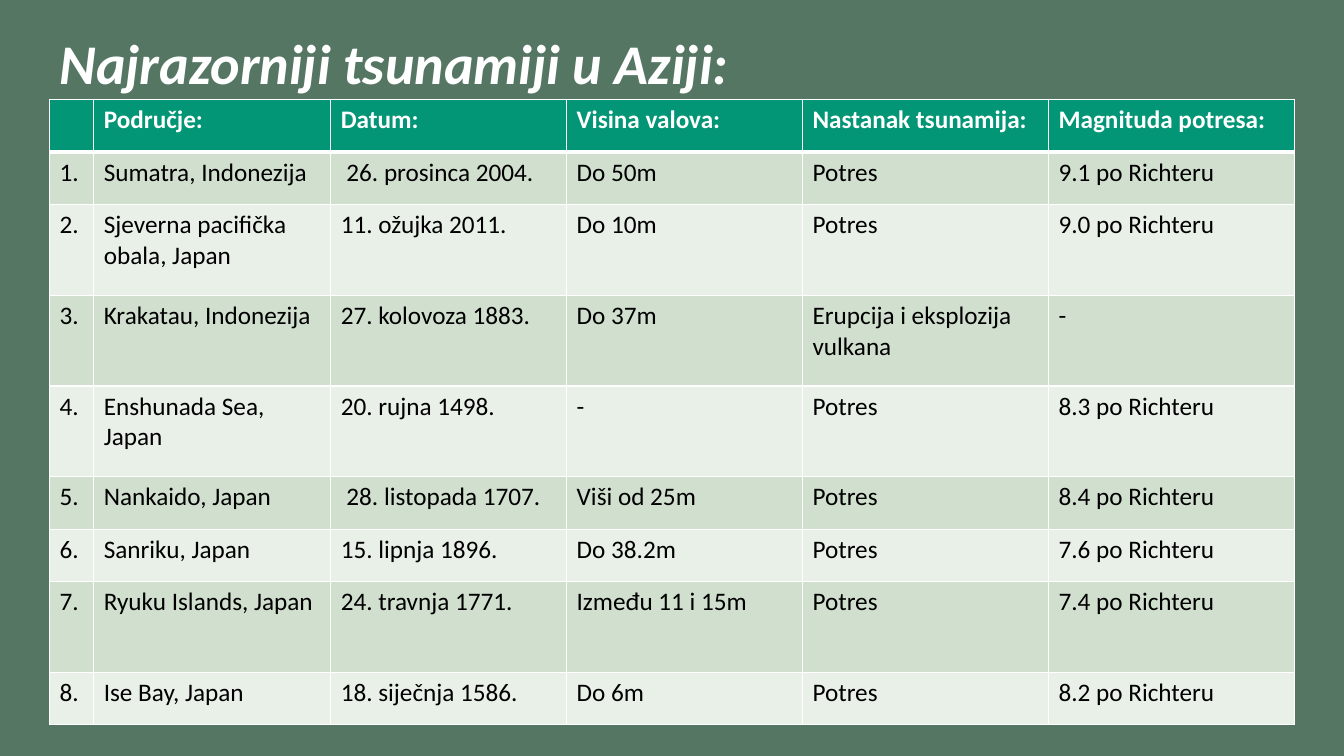
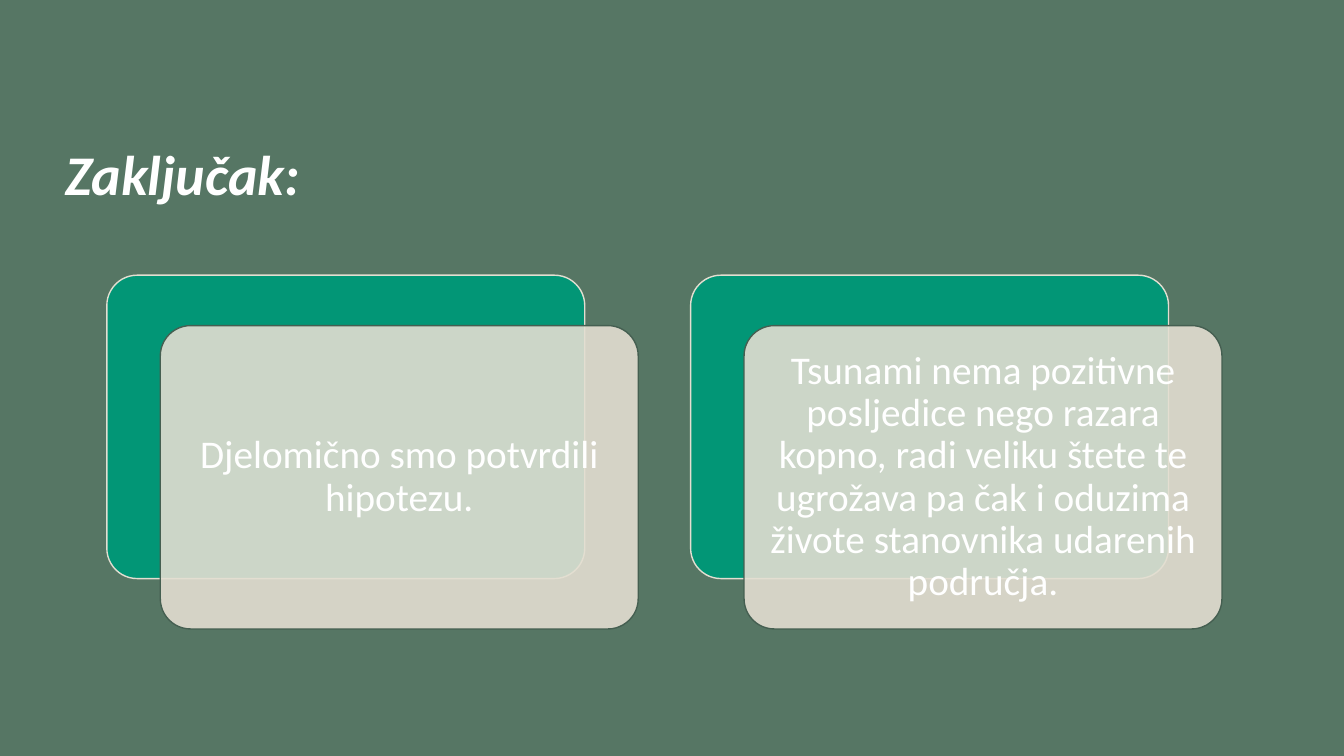
from itertools import product

from pptx import Presentation
from pptx.dml.color import RGBColor
from pptx.enum.shapes import MSO_SHAPE
from pptx.enum.text import MSO_ANCHOR, PP_ALIGN
from pptx.oxml import parse_xml
from pptx.oxml.ns import nsdecls, qn
from pptx.util import Inches, Pt

WHITE = RGBColor(0xFF, 0xFF, 0xFF)
BLACK = RGBColor(0, 0, 0)
MOSS = RGBColor(0x56, 0x76, 0x64)
GREEN = RGBColor(0x02, 0x96, 0x76)
SAND = RGBColor(0xE3, 0xDE, 0xD1)
PINE = RGBColor(0x45, 0x5F, 0x51)
BANDS = [RGBColor(0xE9, 0xF0, 0xE8), RGBColor(0xD1, 0xDF, 0xCE)]

FACE = "Calibri"
TITLE = {"name": FACE, "size": Pt(40), "bold": True, "italic": True}
HEAD = {"name": FACE, "size": Pt(18), "bold": True}
BODY = {"name": FACE, "size": Pt(18), "bold": False}
NOTE = {"name": FACE, "size": Pt(28)}

COLS = [0.44, 2.35, 2.34, 2.34, 2.44, 2.44]
LOW, TALL = 0.52, 0.9
HIGH = [LOW, LOW, TALL, TALL, TALL, LOW, LOW, TALL, LOW]
ROWS = [
    ["", "Područje:", "Datum:", "Visina valova:", "Nastanak tsunamija:", "Magnituda potresa:"],
    ["1.", "Sumatra, Indonezija", " 26. prosinca 2004.", "Do 50m", "Potres", "9.1 po Richteru"],
    ["2.", "Sjeverna pacifička obala, Japan", "11. ožujka 2011.", "Do 10m", "Potres", "9.0 po Richteru"],
    ["3.", "Krakatau, Indonezija", "27. kolovoza 1883.", "Do 37m", "Erupcija i eksplozija vulkana", "-"],
    ["4.", "Enshunada Sea, Japan", "20. rujna 1498.", "-", "Potres", "8.3 po Richteru"],
    ["5.", "Nankaido, Japan", " 28. listopada 1707.", "Viši od 25m", "Potres", "8.4 po Richteru"],
    ["6.", "Sanriku, Japan", "15. lipnja 1896.", "Do 38.2m", "Potres", "7.6 po Richteru"],
    ["7.", "Ryuku Islands, Japan", "24. travnja 1771.", "Između 11 i 15m", "Potres", "7.4 po Richteru"],
    ["8.", "Ise Bay, Japan", "18. siječnja 1586.", "Do 6m", "Potres", "8.2 po Richteru"],
]
NOTES = [
    "Djelomično smo potvrdili hipotezu.",
    "Tsunami nema pozitivne posljedice nego razara kopno, radi veliku štete te "
    "ugrožava pa čak i oduzima živote stanovnika udarenih područja.",
]


def write(para, text, style, color):
    run = para.add_run()
    run.text = text
    for key, value in style.items():
        setattr(run.font, key, value)
    run.font.color.rgb = color


def paint(item, color):
    item.fill.solid()
    item.fill.fore_color.rgb = color


def add_title(slide, text, left, top, width, height):
    box = slide.shapes.add_textbox(*map(Inches, (left, top, width, height)))
    frame = box.text_frame
    frame.word_wrap = True
    frame.vertical_anchor = MSO_ANCHOR.MIDDLE
    para = frame.paragraphs[0]
    para.line_spacing = 0.9
    write(para, text, TITLE, WHITE)


def add_rules(cell, row):
    props = cell._tc.get_or_add_tcPr()
    widths = {"L": 1, "R": 1, "T": 3 if row == 1 else 1, "B": 3 if row == 0 else 1}
    for side, width in widths.items():
        props.append(parse_xml(
            f'<a:ln{side} {nsdecls("a")} w="{Pt(width)}"><a:solidFill>'
            f'<a:srgbClr val="{WHITE}"/></a:solidFill></a:ln{side}>'))


def add_grid(slide, left, top):
    size = map(Inches, (left, top, sum(COLS), sum(HIGH)))
    table = slide.shapes.add_table(len(ROWS), len(COLS), *size).table
    for col, width in zip(table.columns, COLS):
        col.width = Inches(width)
    for row, height in zip(table.rows, HIGH):
        row.height = Inches(height)
    for row, col in product(range(len(ROWS)), range(len(COLS))):
        cell = table.cell(row, col)
        add_rules(cell, row)
        paint(cell, BANDS[row % 2] if row else GREEN)
        text = ROWS[row][col]
        if text:
            style, color = (BODY, BLACK) if row else (HEAD, WHITE)
            write(cell.text_frame.paragraphs[0], text, style, color)


def add_panel(slide, left, top, fill, line):
    place = map(Inches, (left, top, 4.74, 3.01))
    panel = slide.shapes.add_shape(MSO_SHAPE.ROUNDED_RECTANGLE, *place)
    panel.adjustments[0] = 0.1
    panel.shadow.inherit = False
    paint(panel, fill)
    panel.line.color.rgb = line
    panel.line.width = Pt(1)
    return panel


def fade(shape, share):
    color = shape._element.spPr.find(qn("a:solidFill")).find(qn("a:srgbClr"))
    color.append(parse_xml(f'<a:alpha {nsdecls("a")} val="{share * 1000}"/>'))


def add_card(slide, text, left, top):
    add_panel(slide, left, top, GREEN, SAND)
    front = add_panel(slide, left + 0.53, top + 0.5, SAND, PINE)
    fade(front, 90)
    frame = front.text_frame
    frame.word_wrap = True
    frame.vertical_anchor = MSO_ANCHOR.MIDDLE
    for side in ("left", "right", "top", "bottom"):
        setattr(frame, f"margin_{side}", Inches(0.12))
    para = frame.paragraphs[0]
    para.alignment = PP_ALIGN.CENTER
    para.line_spacing = 0.9
    write(para, text, NOTE, WHITE)


def main():
    deck = Presentation()
    deck.slide_width, deck.slide_height = Inches(13.33), Inches(7.5)
    paint(deck.slide_master.background, MOSS)
    blank = deck.slide_layouts[6]

    slide = deck.slides.add_slide(blank)
    add_title(slide, "Najrazorniji tsunamiji u Aziji:", 0.49, -0.07, 11.5, 1.45)
    add_grid(slide, 0.49, 0.99)

    slide = deck.slides.add_slide(blank)
    add_title(slide, "Zaključak:", 0.55, 0.91, 11.13, 1.7)
    for index, text in enumerate(NOTES):
        add_card(slide, text, 1.06 + 5.79 * index, 2.73)

    deck.save("out.pptx")


if __name__ == "__main__":
    main()
